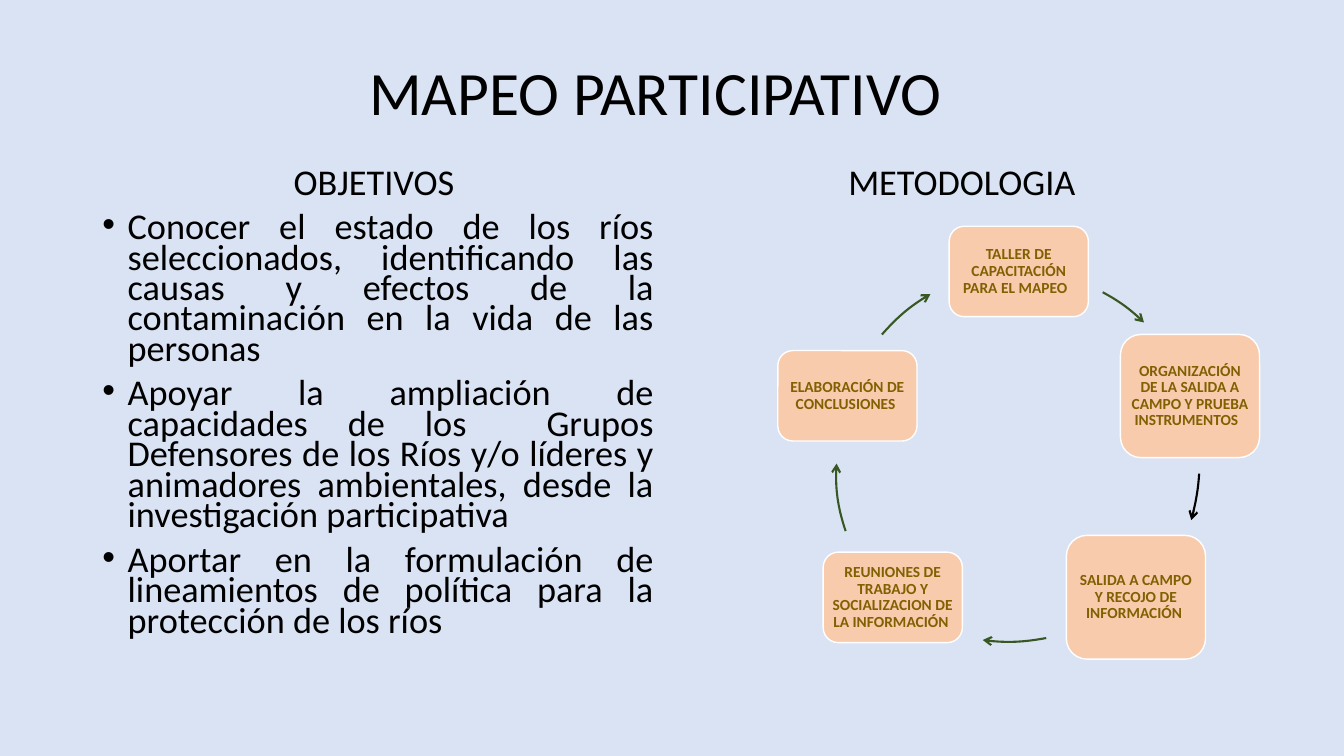
from pptx import Presentation
from pptx.dml.color import RGBColor
from pptx.enum.shapes import MSO_SHAPE
from pptx.enum.text import MSO_ANCHOR, PP_ALIGN
from pptx.oxml.ns import qn
from pptx.util import Pt
from lxml import etree

ROUNDED = MSO_SHAPE.ROUNDED_RECTANGLE
MIDDLE, TOP = MSO_ANCHOR.MIDDLE, MSO_ANCHOR.TOP
CENTER, JUSTIFY = PP_ALIGN.CENTER, PP_ALIGN.JUSTIFY

BACKGROUND = RGBColor(0xDA, 0xE3, 0xF3)
BLACK = RGBColor(0, 0, 0)
WHITE = RGBColor(0xFF, 0xFF, 0xFF)
PEACH = RGBColor(0xF8, 0xCB, 0xAD)
BROWN = RGBColor(0x80, 0x60, 0x00)
GREEN = RGBColor(0x38, 0x57, 0x23)
CYCLE_SIZE = Pt(257)


def write(p, text, size, color, align=CENTER, spacing=0.9, bold=False):
    p.text = text
    p.alignment = align
    p.line_spacing = spacing
    p.font.name = "Calibri"
    p.font.size = Pt(size)
    p.font.bold = bold
    p.font.color.rgb = color


def add_text_frame(slide, left, top, width, height, anchor):
    box = slide.shapes.add_textbox(Pt(left), Pt(top), Pt(width), Pt(height))
    tf = box.text_frame
    tf.word_wrap = True
    tf.vertical_anchor = anchor
    return tf


prs = Presentation()
prs.slide_width, prs.slide_height = Pt(960), Pt(540)
s = prs.slides.add_slide(prs.slide_layouts[6])
s.background.fill.solid()
s.background.fill.fore_color.rgb = BACKGROUND

# Title
tf = add_text_frame(s, 66, 18.3, 814.5, 100, MIDDLE)
write(tf.paragraphs[0], "MAPEO PARTICIPATIVO ", 44, BLACK)

# Two columns: heading, then bullets
columns = [
    (66.1, "OBJETIVOS ", [
        "Conocer el estado de los ríos seleccionados, identificando las causas "
        "y efectos de la contaminación en la vida de las personas",
        "Apoyar la ampliación de capacidades de los  Grupos Defensores de los "
        "Ríos y/o líderes y animadores ambientales, desde la investigación "
        "participativa",
        "Aportar en la formulación de lineamientos de política para la "
        "protección de los ríos ",
    ]),
    (486, "METODOLOGIA ", []),
]
for left, heading, bullets in columns:
    tf = add_text_frame(s, left, 118.4, 408, 368, TOP)
    p = tf.paragraphs[0]
    write(p, heading, 25.9, BLACK, spacing=0.7)
    p.space_before = Pt(10)
    for bullet in bullets:
        p = tf.add_paragraph()
        write(p, bullet, 25.9, BLACK, JUSTIFY, 0.7)
        p.space_before = Pt(10)
        pPr = p._p.get_or_add_pPr()
        pPr.set("marL", str(Pt(18)))
        pPr.set("indent", str(-Pt(18)))
        font = etree.Element(qn("a:buFont"), typeface="Arial")
        char = etree.Element(qn("a:buChar"), char="•")
        pPr.find(qn("a:spcBef")).addnext(font)
        font.addnext(char)

# Cycle steps: left, top, height, text
steps = [
    (678, 161.6, 64.6, "TALLER DE CAPACITACIÓN PARA EL MAPEO  "),
    (800.3, 238.9, 88, "ORGANIZACIÓN DE LA SALIDA A CAMPO Y PRUEBA INSTRUMENTOS  "),
    (761.7, 382.4, 88.4, "SALIDA A CAMPO Y RECOJO DE INFORMACIÓN "),
    (588, 394.4, 64.6, "REUNIONES DE TRABAJO Y SOCIALIZACION DE LA INFORMACIÓN "),
    (555.6, 250.4, 64.6, "ELABORACIÓN DE CONCLUSIONES "),
]
for left, top, height, text in steps:
    sp = s.shapes.add_shape(ROUNDED, Pt(left), Pt(top), Pt(99.4), Pt(height))
    sp.shadow.inherit = False
    sp.fill.solid()
    sp.fill.fore_color.rgb = PEACH
    sp.line.color.rgb = WHITE
    sp.line.width = Pt(1)
    tf = sp.text_frame
    tf.word_wrap = True
    tf.vertical_anchor = MIDDLE
    tf.margin_left = tf.margin_right = tf.margin_top = tf.margin_bottom = Pt(3.3)
    write(tf.paragraphs[0], text, 11, BROWN, bold=True)

# Curved arrows: colour, corner of the cycle's square, four Bézier points
arrows = [
    (GREEN, (599, 193.7), (787.7, 208.8), (798.5, 214.6), (808.6, 221.8), (817.2, 230.4)),
    (BLACK, (599, 205.2), (856.6, 338.4), (855.9, 349.2), (853.9, 360.7), (851, 371.5)),
    (GREEN, (591.8, 200.9), (747.4, 455.8), (732.2, 458.6), (717.1, 459.4), (702, 457.2)),
    (GREEN, (596.9, 208.8), (604.1, 379.4), (599, 364.3), (596.2, 347.8), (597.6, 331.2)),
    (GREEN, (599, 193.7), (630, 239), (640.1, 227.5), (651.6, 217.4), (664.6, 210.2)),
]
for color, (left, top), *points in arrows:
    local = [(Pt(x - left), Pt(y - top)) for x, y in points]
    builder = s.shapes.build_freeform(*local[0])
    builder.add_line_segments(local[-1:], close=False)
    sp = builder.convert_to_shape()
    sp.left, sp.top = Pt(left), Pt(top)
    sp.width = sp.height = CYCLE_SIZE

    # Draw the arc within the full square
    outline = next(sp._element.iter(qn("a:path")))
    outline.set("w", str(CYCLE_SIZE))
    outline.set("h", str(CYCLE_SIZE))
    for part in list(outline):
        outline.remove(part)
    for tag, pts in (("a:moveTo", local[:1]), ("a:cubicBezTo", local[1:])):
        segment = etree.SubElement(outline, qn(tag))
        for x, y in pts:
            etree.SubElement(segment, qn("a:pt"), x=str(x), y=str(y))

    sp.shadow.inherit = False
    sp.fill.background()
    sp.line.color.rgb = color
    sp.line.width = Pt(1.5)
    ln = sp._element.spPr.find(qn("a:ln"))
    etree.SubElement(ln, qn("a:tailEnd"), type="arrow")

prs.save("out.pptx")
